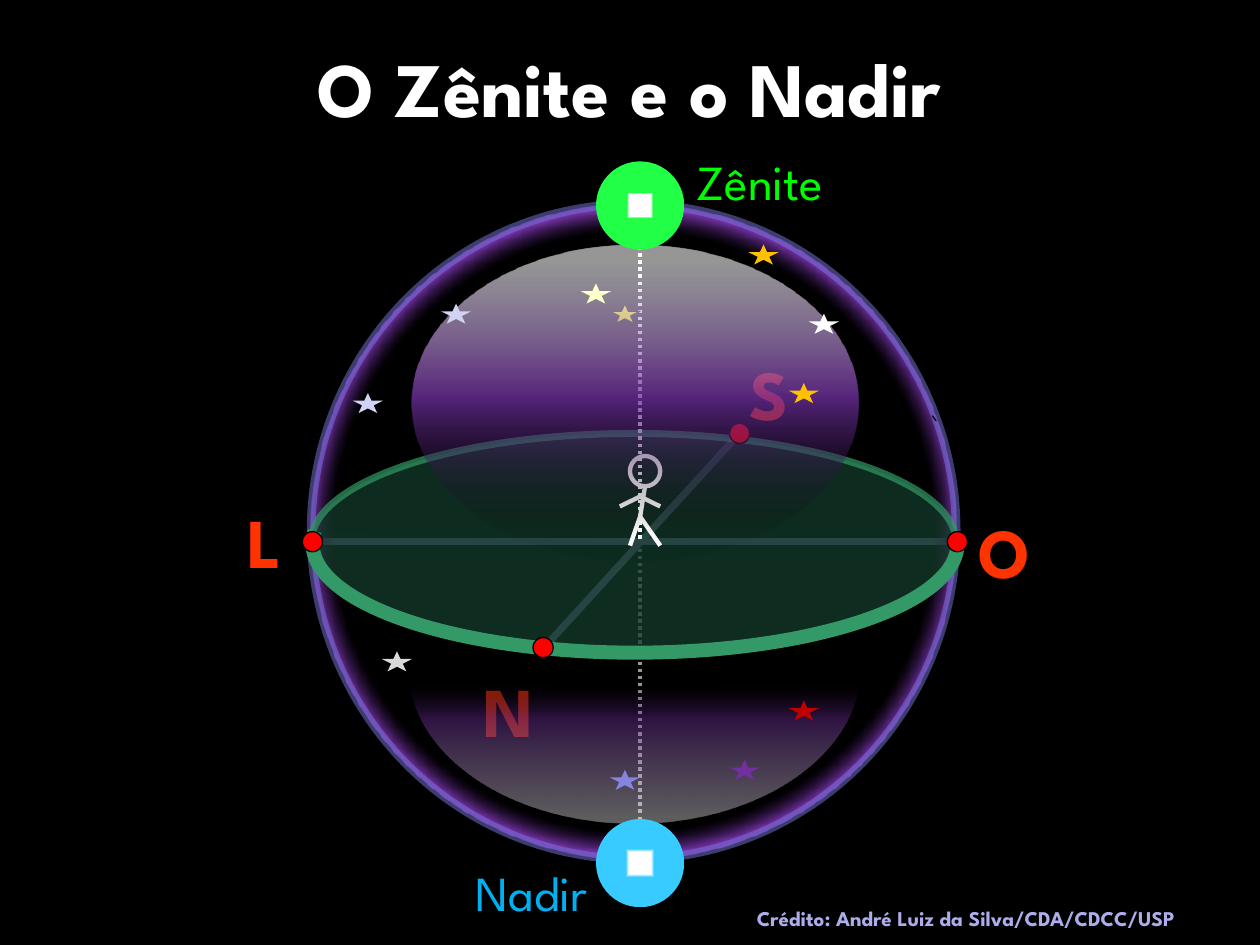
from lxml.etree import SubElement
from pptx import Presentation
from pptx.dml.color import RGBColor
from pptx.enum.dml import MSO_LINE as Dash
from pptx.enum.shapes import MSO_CONNECTOR as Conn, MSO_SHAPE as Geo
from pptx.enum.text import MSO_ANCHOR as Anchor, MSO_AUTO_SIZE as Fit, PP_ALIGN as Align
from pptx.oxml import parse_xml
from pptx.oxml.ns import nsdecls, qn
from pptx.util import Pt

# Content: all lengths in points
FONT = "League Spartan"
MID_X, MID_Y = 365.8, 309.6
TOP, BASE = 116.6, 491
LEFT, WIDE = 177.8, 368.6
STAR = (17.3, 11.5)
DOT = 11.5
DISC = 50.4

WEST, EAST, NORTH, SOUTH = (179.3, MID_Y), (547.9, MID_Y), (309, 372.2), (422.6, 247.7)
MARKS = [("N", 269.3, 378), ("L", 134.6, 281.5), ("S", 421.2, 196.6), ("O", 552.2, 287.3)]
DOTS = [(172.8, 303.8), (416.9, 241.9), (304.6, 364.3), (541.4, 303.8)]
HIP, NECK = (MID_X, 295.2), (MID_X, 283.7)
LIMBS = [((368.6, 277.9), HIP), (HIP, (377.3, 311.8)), (HIP, (360, 311.8)),
         (NECK, (377.3, 289.4)), ((354.2, 289.4), NECK)]
STARS = [
    (201.6, 224.6, "D2D2F4"), (252, 173.5, "D2D2F4"), (450.7, 218.9, "FFC000"),
    (427.7, 139.7, "FFC000"), (462.2, 179.3, "FFFFFF"), (331.9, 162, "FFFFCC"),
    (416.9, 434.2, "7030A0"), (450.7, 400.3, "C00000"), (348.5, 439.9, "8585E0"),
    (218.2, 372.2, "D9D9D9"),
]
POLES = [("Zênite", 372.2, 82.8, "00FF00"), ("Nadir", 241.9, 489.6, "00B0F0")]
DISCS = [(92.2, "21FF46", 21, 82), (468, "37CBFF", 23, 77)]
CREDIT = "Crédito: André Luiz da Silva/CDA/CDCC/USP"

# Gradient stops: position, colour, opacity
RIM = [(65, "000000", 40), (70, "7030A0", 100)]
DOME = [(6, "FFFFFF", 58), (48, "7030A0", 77), (91, "000000", 2)]
BOWL = [(3, "FFFFFF", 37), (68, "7030A0", 41), (94, "000000", 0)]


def rgb(code):
    return RGBColor.from_string(code)


def fade(node, part):
    """Set the opacity, in percent, of the solid colour under node."""
    tint = node.find(qn("a:solidFill")).find(qn("a:srgbClr"))
    SubElement(tint, qn("a:alpha")).set("val", str(part * 1000))


def blend(item, stops, angle=None, kind=None):
    """Fill a shape with a linear gradient, or with one from its centre."""
    rows = "".join(
        f'<a:gs pos="{at * 1000}"><a:srgbClr val="{tint}">'
        f'<a:alpha val="{part * 1000}"/></a:srgbClr></a:gs>'
        for at, tint, part in stops)
    if kind:
        way = (f'<a:path path="{kind}"><a:fillToRect l="50000" t="50000" '
               'r="50000" b="50000"/></a:path>')
    else:
        way = f'<a:lin ang="{angle * 60000}" scaled="0"/>'
    props = item.element.spPr
    for old in props.findall(qn("a:noFill")):
        props.remove(old)
    props.find(qn("a:prstGeom")).addnext(parse_xml(
        f'<a:gradFill rotWithShape="1" {nsdecls("a")}>'
        f'<a:gsLst>{rows}</a:gsLst>{way}</a:gradFill>'))


def draw(home, geo, box, fill=None, line=None, width=0.75, clear=None, thin=None, turn=0):
    item = home.add_shape(geo, *map(Pt, box))
    item.shadow.inherit = False
    item.rotation = turn
    if fill:
        item.fill.solid()
        item.fill.fore_color.rgb = rgb(fill)
    else:
        item.fill.background()
    if line:
        item.line.color.rgb = rgb(line)
        item.line.width = Pt(width)
    else:
        item.line.fill.background()
    if clear:
        fade(item.element.spPr, clear)
    if thin:
        fade(item.element.spPr.find(qn("a:ln")), thin)
    return item


def link(home, start, end, tint, width, dash=None):
    item = home.add_connector(Conn.STRAIGHT, *map(Pt, (*start, *end)))
    item.line.color.rgb = rgb(tint)
    item.line.width = Pt(width)
    if dash:
        item.line.dash_style = dash
    SubElement(item.element.spPr, qn("a:effectLst"))


def write(item, text, size, tint, bold=False, align=Align.LEFT, fit=Fit.SHAPE_TO_FIT_TEXT):
    frame = item.text_frame
    frame.word_wrap = True
    frame.auto_size = fit
    para = frame.paragraphs[0]
    para.alignment = align
    run = para.add_run()
    run.text = text
    font = run.font
    font.name, font.size, font.bold = FONT, Pt(size), bold
    font.color.rgb = rgb(tint)


def mark(home, text, x, y):
    write(home.add_textbox(*map(Pt, (x, y, 28, 55.4))), text, 40, "FF3300", bold=True)


deck = Presentation()
deck.slide_width, deck.slide_height = Pt(720), Pt(540)
slide = deck.slides.add_slide(deck.slide_layouts[5])
slide.background.fill.solid()
slide.background.fill.fore_color.rgb = rgb("000000")
main = slide.shapes

# Title
title = main.title
title.left, title.top, title.width, title.height = map(Pt, (54, 4.3, 612, 90))
title.text_frame.vertical_anchor = Anchor.MIDDLE
write(title, "O Zênite e o Nadir", 44, "FFFFFF", bold=True, align=Align.CENTER, fit=Fit.NONE)

# Lower axis and north-south line
link(main, (MID_X, MID_Y), (MID_X, BASE), "FFFFFF", 2, Dash.ROUND_DOT)
link(main, NORTH, SOUTH, "A5A5E9", 4)

# Sphere, compass letters and horizon
globe = main.add_group_shape().shapes
link(globe, WEST, EAST, "A5A5E9", 4)
mark(globe, *MARKS[0])
ball = draw(globe, Geo.OVAL, (LEFT, TOP, WIDE, BASE - TOP), line="7878DE", width=5, thin=50)
blend(ball, RIM, kind="circle")
for row in MARKS[1:]:
    mark(globe, *row)
draw(globe, Geo.OVAL, (LEFT, 247.7, WIDE, 124.6), "143C2B", "339966", 4, clear=73, thin=70)

# Tick on the rim, upper axis and front of the horizon
link(main, (535, 240.5), (532.8, 237.6), "000000", 0.75)
link(main, (MID_X, TOP), (MID_X, MID_Y), "FFFFFF", 2, Dash.ROUND_DOT)
front = draw(main, Geo.ARC, (178.6, 248.4, WIDE, 124.6), "143C2B", "339966", 8, clear=7)
for i, angle in enumerate((359.3, 182.25)):
    front.adjustments[i] = angle * 0.6
draw(main, Geo.STAR_5_POINT, (348.5, 173.5, *STAR), "FFFF00", "000000")

# Observer
man = main.add_group_shape().shapes
draw(man, Geo.OVAL, (360, 260.6, 17.3, 17.3), line="FFFFFF", width=2.5)
for start, end in LIMBS:
    link(man, start, end, "FFFFFF", 2.5)

# Compass dots
for x, y in DOTS:
    draw(main, Geo.OVAL, (x, y, DOT, DOT), "FF0000", "000000")

# Light in the dome and in the bowl
blend(draw(main, Geo.OVAL, (235.4, 139.7, 254.9, 181.4)), DOME, angle=90)
bowl = draw(main, Geo.MOON, (318.2, 297.4, 88.6, 257.8), turn=270)
bowl.adjustments[0] = 0.875
blend(bowl, BOWL, angle=0)

# Stars
sky = main.add_group_shape().shapes
for x, y, tint in STARS:
    draw(sky, Geo.STAR_5_POINT, (x, y, *STAR), tint)

# Pole names and credit
for text, x, y, tint in POLES:
    write(main.add_textbox(*map(Pt, (x, y, 123.8, 41))), text, 28, tint, align=Align.CENTER)
write(main.add_textbox(*map(Pt, (425.5, 514.1, 292.3, 21.6))), CREDIT, 12, "ADADEB", bold=True)

# Pole discs
for y, tint, near, far in DISCS:
    disc = draw(main, Geo.OVAL, (340.6, y, DISC, DISC), turn=305.7)
    blend(disc, [(18, "FFFFFF", 100), (near, tint, 100), (far, tint, 2)], kind="shape")

deck.save("out.pptx")
